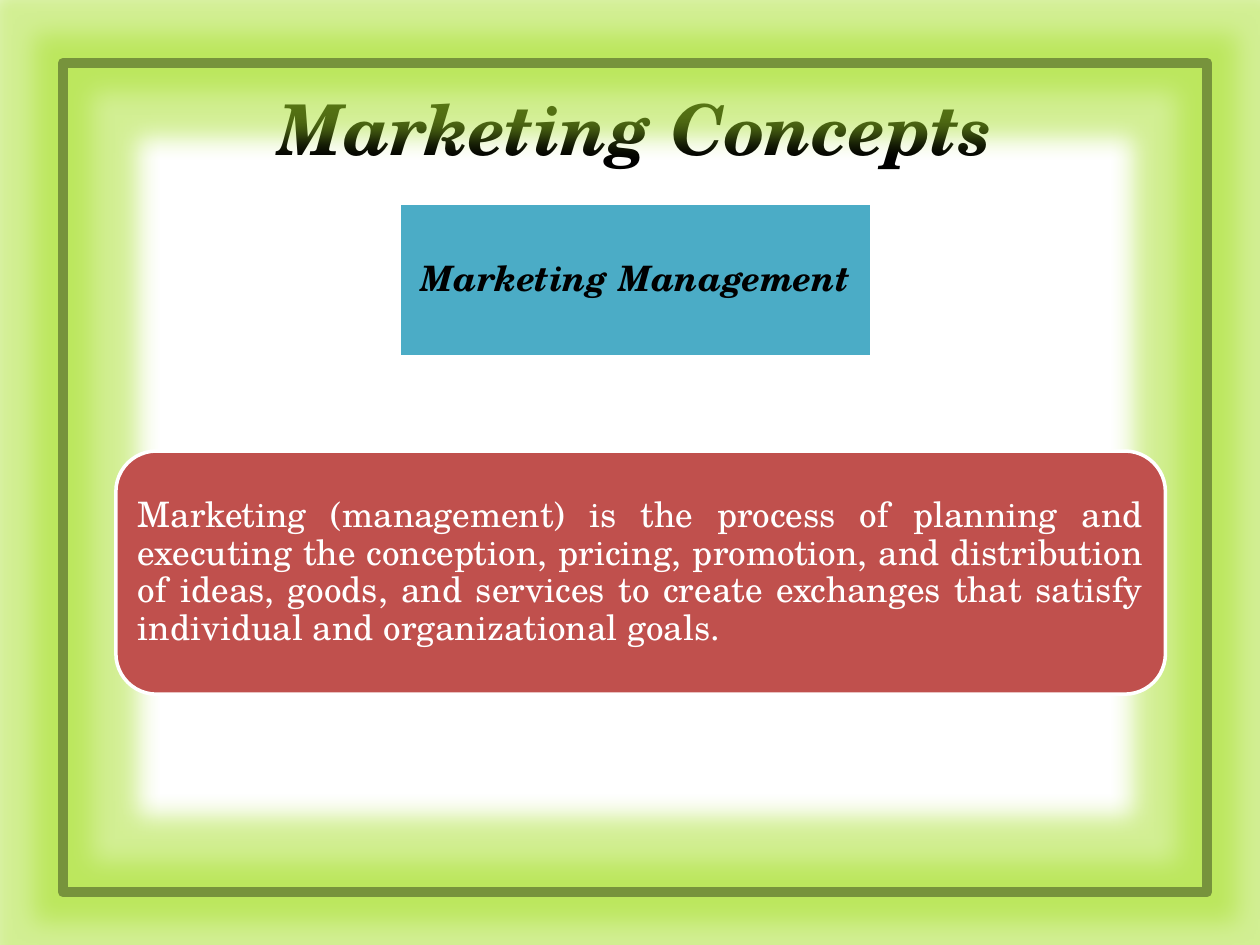
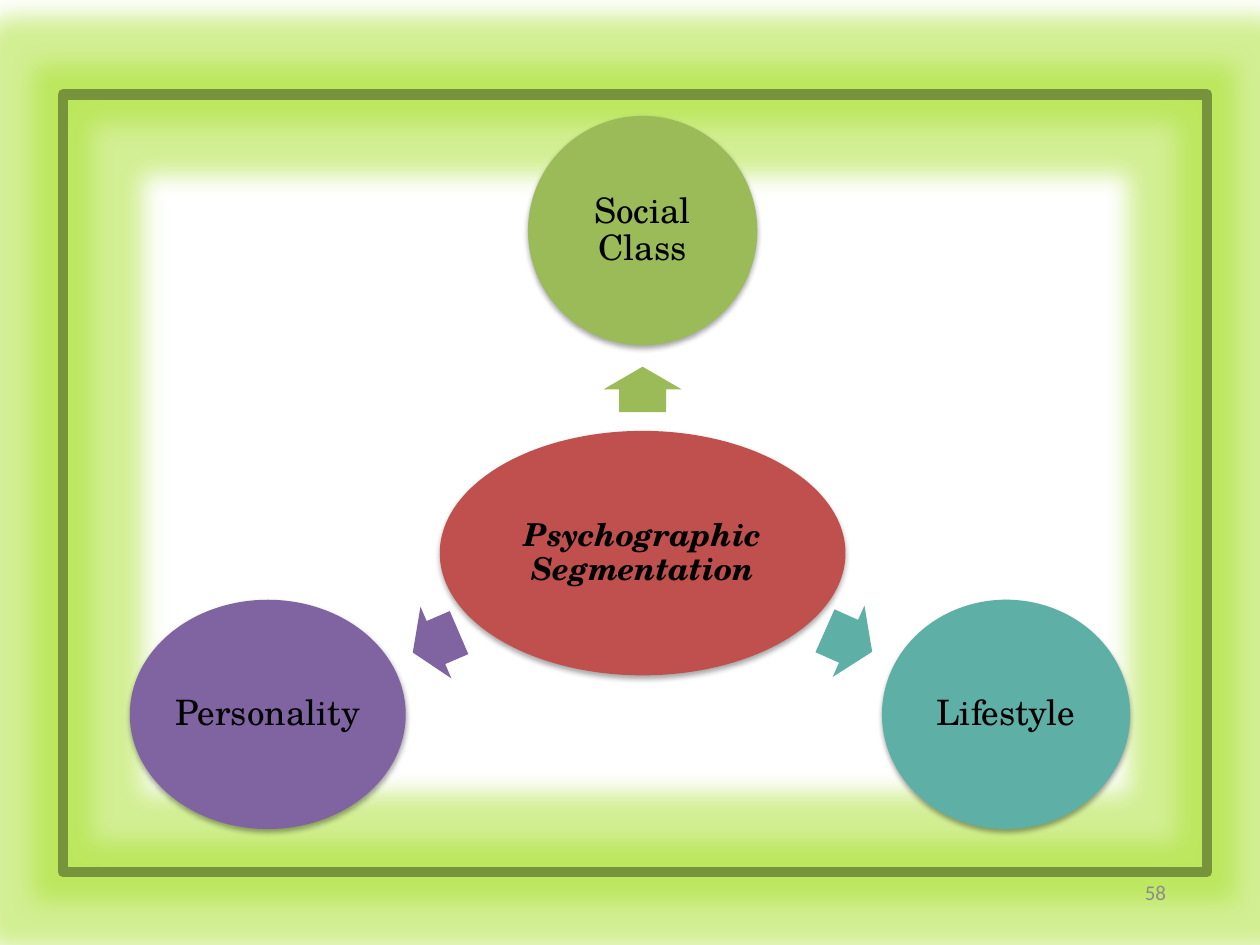
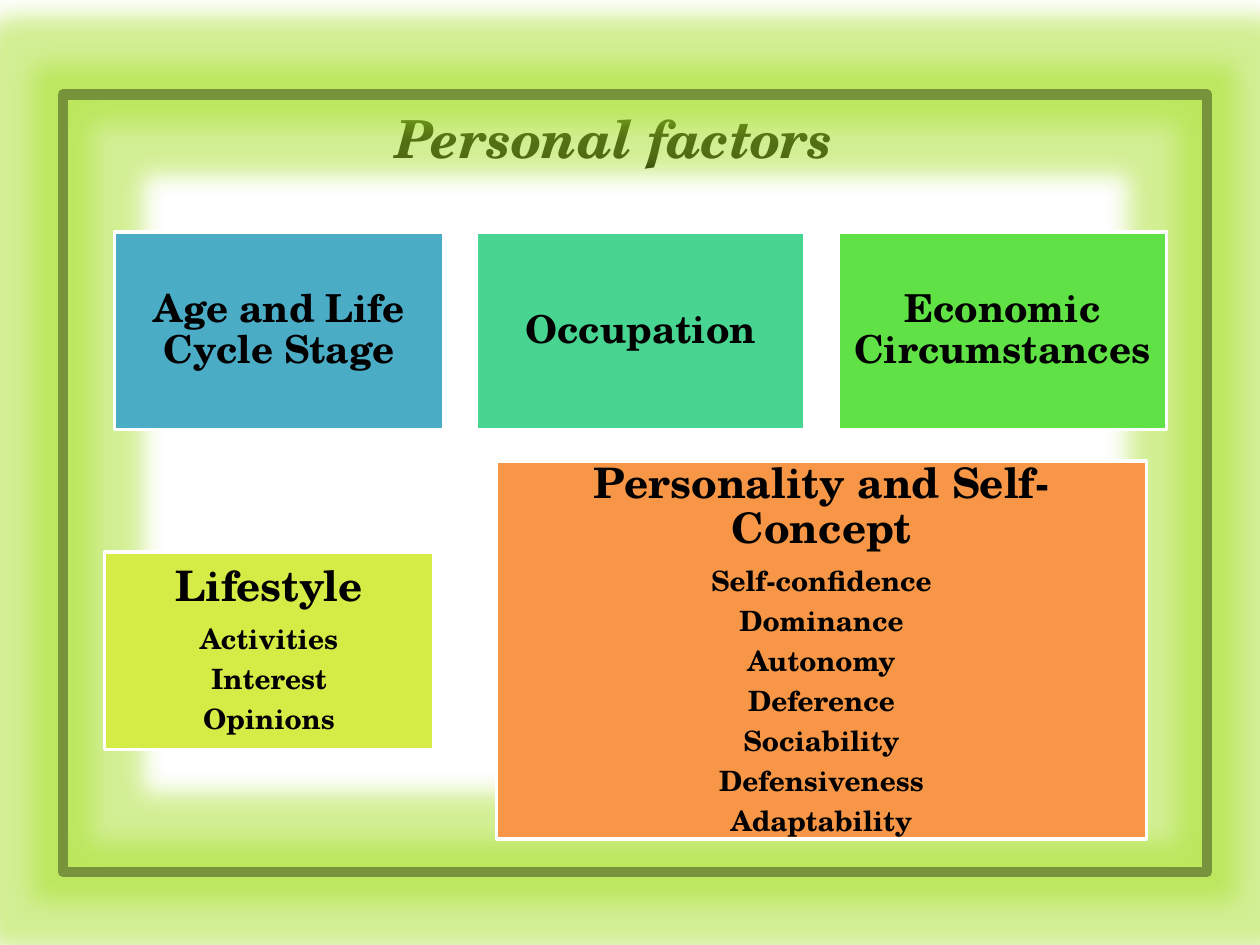
"""Builds three marketing slides inside a glowing green frame."""
from typing import NamedTuple, Optional

from lxml import etree
from pptx import Presentation
from pptx.dml.color import RGBColor
from pptx.enum import shapes, text
from pptx.oxml import ns
from pptx.util import Inches, Pt

FACE = "TeX Gyre Schola"
BLACK = RGBColor(0x00, 0x00, 0x00)
WHITE = RGBColor(0xFF, 0xFF, 0xFF)
GRAY = RGBColor(0x8C, 0x8C, 0x8C)
OLIVE = RGBColor(0x77, 0x93, 0x3C)
LIME = RGBColor(0xA6, 0xDF, 0x28)
BLUE = RGBColor(0x4B, 0xAC, 0xC6)
RED = RGBColor(0xC0, 0x50, 0x4D)
GREEN = RGBColor(0x9B, 0xBB, 0x59)
TEAL = RGBColor(0x5E, 0xAF, 0xA6)
PURPLE = RGBColor(0x80, 0x64, 0xA2)
MINT = RGBColor(0x48, 0xD4, 0x91)
GRASS = RGBColor(0x60, 0xE1, 0x46)
YELLOW = RGBColor(0xD5, 0xEC, 0x46)
ORANGE = RGBColor(0xF7, 0x96, 0x46)

KIND = shapes.MSO_SHAPE
ALIGN = text.PP_ALIGN
MIDDLE = text.MSO_ANCHOR.MIDDLE


class Box(NamedTuple):
    """Place of an element, in inches."""
    left: float
    top: float
    width: float
    height: float


class Card(NamedTuple):
    """Filled shape with a heading and an optional list."""
    box: Box
    fill: RGBColor
    head: str
    size: float = 22
    inset: float = 0.09
    items: tuple = ()
    kind: int = KIND.RECTANGLE
    color: RGBColor = BLACK
    bold: bool = True
    italic: bool = False
    align: int = ALIGN.CENTER
    edge: Optional[RGBColor] = WHITE
    drop: float = 0


class Arrow(NamedTuple):
    """Block arrow turned by an angle."""
    box: Box
    turn: float
    fill: RGBColor


def place(box: Box) -> list:
    """Gives the box as lengths."""
    return [Inches(side) for side in box]


def write(frame, *lines, sizes=(20,), face=FACE, color=BLACK, bold=False,
          italic=False, align=ALIGN.CENTER, anchor=MIDDLE,
          inset=(0.1, 0.05, 0.1, 0.05), lead=1.0, after=0.0, before=0.0):
    """Fills a text frame, one paragraph a line; the last size carries on."""
    frame.word_wrap = True
    frame.auto_size = text.MSO_AUTO_SIZE.NONE
    frame.vertical_anchor = anchor
    (frame.margin_left, frame.margin_top,
     frame.margin_right, frame.margin_bottom) = place(inset)
    for num, line in enumerate(lines):
        para = frame.add_paragraph() if num else frame.paragraphs[0]
        size = sizes[min(num, len(sizes) - 1)]
        para.alignment = align
        para.line_spacing = lead
        para.space_before = Pt(before)
        para.space_after = Pt(after * size)
        run = para.add_run()
        run.text = line
        font = run.font
        font.name, font.size = face, Pt(size)
        font.bold, font.italic = bold, italic
        font.color.rgb = color


def effect(shape, tag: str, color: RGBColor, alpha: int, **attrs):
    """Gives a shape a glow or a shadow."""
    prop = shape.element.spPr
    for old in prop.findall(ns.qn("a:effectLst")):
        prop.remove(old)
    group = etree.SubElement(prop, ns.qn("a:effectLst"))
    node = etree.SubElement(group, ns.qn(tag), {k: str(v) for k, v in attrs.items()})
    tint = etree.SubElement(node, ns.qn("a:srgbClr"), val=str(color))
    etree.SubElement(tint, ns.qn("a:alpha"), val=str(alpha * 1000))


def draw(slide, kind: int, box: Box, fill=None, edge=None, wide=2.0):
    """Adds a preset shape without a shadow."""
    shape = slide.shapes.add_shape(kind, *place(box))
    shape.shadow.inherit = False
    if fill is None:
        shape.fill.background()
    else:
        shape.fill.solid()
        shape.fill.fore_color.rgb = fill
    if edge is None:
        shape.line.fill.background()
    else:
        shape.line.color.rgb = edge
        shape.line.width = Pt(wide)
    return shape


def border(slide, top: float, height: float):
    """Draws the glowing frame."""
    shape = draw(slide, KIND.RECTANGLE, Box(0.5, top, 9.08, height), edge=OLIVE, wide=6)
    effect(shape, "a:glow", LIME, 50, rad=Pt(28))


def title(slide, words: str, box: Box, size: float):
    """Moves and fills the title placeholder."""
    head = slide.shapes.title
    head.left, head.top, head.width, head.height = place(box)
    write(head.text_frame, words, sizes=(size,), bold=True, italic=True,
          anchor=text.MSO_ANCHOR.TOP, inset=(0, 0.01, 0, 0), before=0.9)


def deal(slide, card: Card):
    """Draws a card with its text."""
    shape = draw(slide, card.kind, card.box, card.fill, card.edge)
    if card.drop:
        effect(shape, "a:outerShdw", BLACK, 35, blurRad=Pt(3.1),
               dist=Pt(card.drop), dir=5400000, rotWithShape=0)
    write(shape.text_frame, card.head, *card.items, sizes=(card.size, 16),
          color=card.color, bold=card.bold, italic=card.italic,
          align=card.align, inset=(card.inset,) * 4, lead=0.9, after=0.35)


def point(slide, arrow: Arrow):
    """Draws a block arrow."""
    shape = draw(slide, KIND.RIGHT_ARROW, arrow.box, arrow.fill)
    shape.adjustments[0], shape.adjustments[1] = 0.6, 0.5
    shape.rotation = arrow.turn


def oval(box: Box, fill: RGBColor, head: str, **more) -> Card:
    """Describes a round card with a soft shadow."""
    look = dict(size=20, inset=0.03, kind=KIND.OVAL, bold=False, edge=None, drop=1.8)
    return Card(box, fill, head, **{**look, **more})


def concepts(deck):
    """Builds the slide on marketing concepts."""
    slide = deck.slides.add_slide(deck.slide_layouts[5])
    border(slide, 0.5, 6.58)
    title(slide, "Marketing Concepts", Box(0.5, 0.67, 9.08, 0.69), 40)
    deal(slide, Card(Box(3.17, 1.61, 3.75, 1.22), BLUE, "Marketing Management",
                     size=20, inset=0.08, italic=True))
    deal(slide, Card(
        Box(0.92, 3.58, 8.33, 1.93), RED,
        "Marketing (management) is the process of planning and executing the "
        "conception, pricing, promotion, and distribution of ideas, goods, and "
        "services to create exchanges that satisfy individual and "
        "organizational goals.",
        size=20, inset=0.08, kind=KIND.ROUNDED_RECTANGLE, color=WHITE,
        bold=False, align=ALIGN.JUSTIFY))


def segments(deck):
    """Builds the slide on psychographic segmentation."""
    slide = deck.slides.add_slide(deck.slide_layouts[6])
    border(slide, 0.75, 6.17)
    page = slide.shapes.add_textbox(*place(Box(8.67, 6.83, 1, 0.5)))
    write(page.text_frame, "58", sizes=(12,), face="Calibri", color=GRAY)
    for card in (
        oval(Box(3.49, 3.42, 3.22, 1.94), RED, "Psychographic Segmentation",
             size=18, bold=True, italic=True, drop=1.6),
        oval(Box(4.19, 0.92, 1.82, 1.82), GREEN, "Social Class"),
        oval(Box(7, 4.76, 1.97, 1.82), TEAL, "Lifestyle"),
        oval(Box(1.03, 4.76, 2.19, 1.82), PURPLE, "Personality"),
    ):
        deal(slide, card)
    for arrow in (
        Arrow(Box(4.92, 2.78, 0.36, 0.62), 270, GREEN),
        Arrow(Box(6.53, 4.78, 0.41, 0.62), 24, TEAL),
        Arrow(Box(3.26, 4.79, 0.4, 0.62), 156.7, PURPLE),
    ):
        point(slide, arrow)


def factors(deck):
    """Builds the slide on personal factors."""
    slide = deck.slides.add_slide(deck.slide_layouts[5])
    border(slide, 0.75, 6.17)
    title(slide, "Personal factors", Box(1.75, 0.83, 6.25, 0.52), 30)
    row = (("Age and Life Cycle Stage", BLUE), ("Occupation", MINT),
           ("Economic Circumstances", GRASS))
    for num, (head, fill) in enumerate(row):
        deal(slide, Card(Box(0.91 + 2.87 * num, 1.84, 2.61, 1.57), fill, head))
    deal(slide, Card(Box(0.83, 4.38, 2.61, 1.57), YELLOW, "Lifestyle", 24, 0.1,
                     ("Activities", "Interest", "Opinions")))
    deal(slide, Card(Box(3.94, 3.66, 5.16, 3), ORANGE,
                     "Personality and Self-Concept", 24, 0.1,
                     ("Self-confidence", "Dominance", "Autonomy", "Deference",
                      "Sociability", "Defensiveness", "Adaptability")))


def main():
    """Builds and saves the deck."""
    deck = Presentation()
    deck.slide_width, deck.slide_height = Inches(10), Inches(7.5)
    for build in (concepts, segments, factors):
        build(deck)
    deck.save("out.pptx")


if __name__ == "__main__":
    main()
